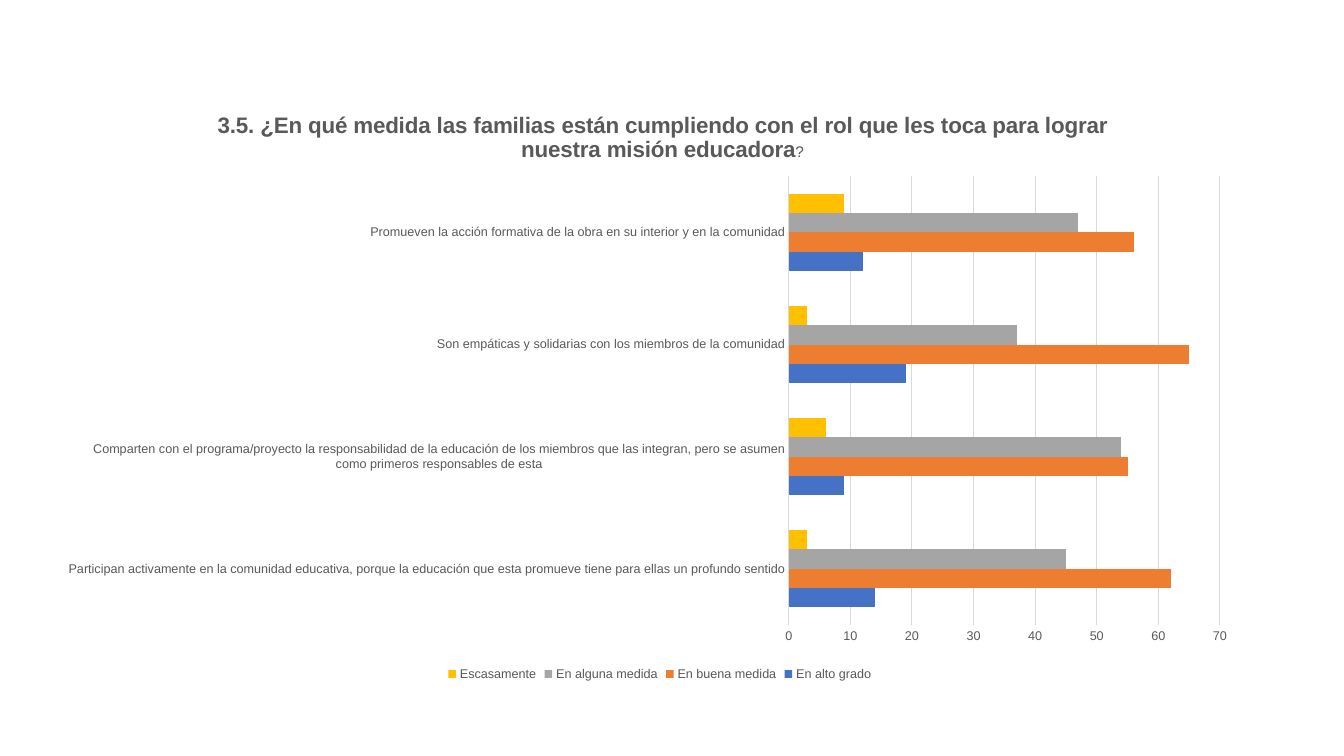
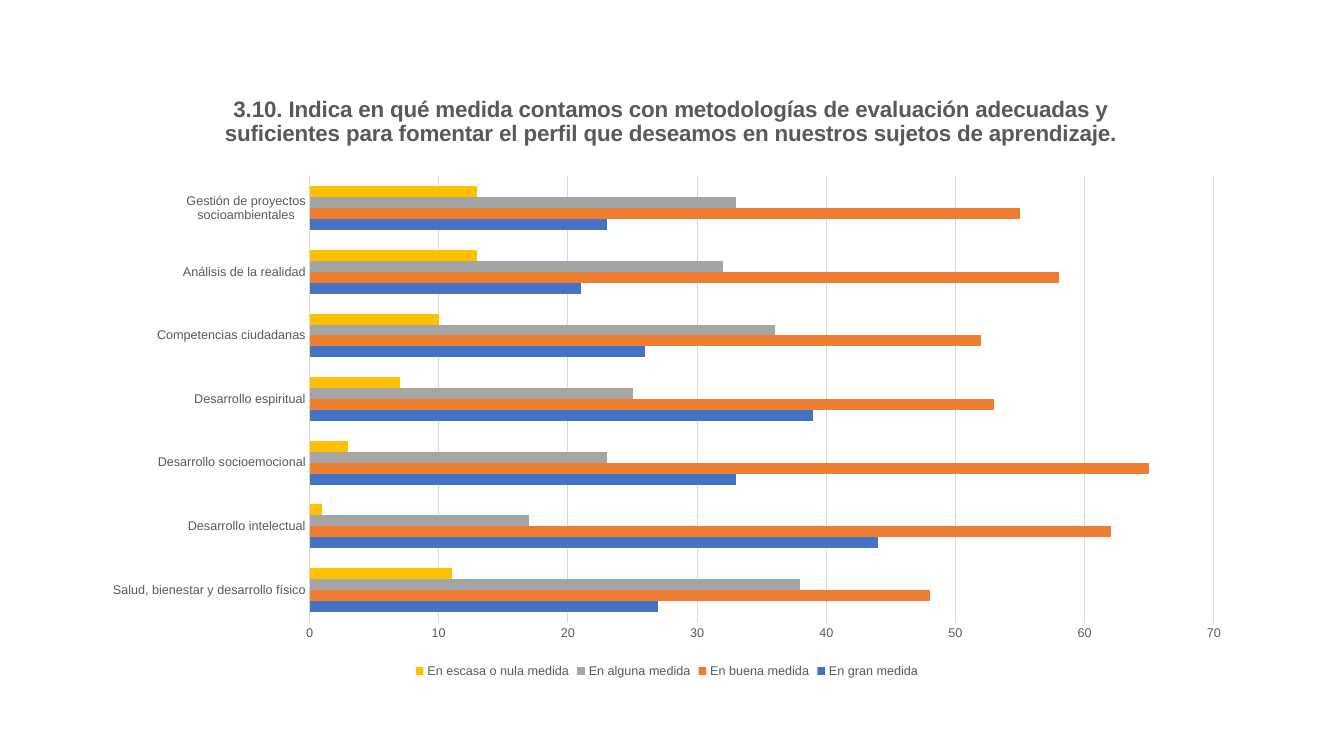
from dataclasses import dataclass

from lxml.etree import SubElement
from pptx import Presentation
from pptx.chart.axis import CategoryAxis, ValueAxis
from pptx.chart.chart import Chart
from pptx.chart.data import CategoryChartData
from pptx.dml.color import RGBColor
from pptx.dml.line import LineFormat
from pptx.enum.chart import XL_CHART_TYPE, XL_LEGEND_POSITION, XL_TICK_MARK
from pptx.oxml.ns import qn
from pptx.oxml.xmlchemy import BaseOxmlElement
from pptx.slide import Slide
from pptx.text.text import Font
from pptx.util import Emu, Pt

SCALE = 9144
FACE = "Arial"
GRAY = "595959"
RULE = "D9D9D9"
HUES = ("4472C4", "ED7D31", "A5A5A5", "FFC000")


@dataclass(frozen=True)
class Box:
    left: int
    top: int
    width: int = 0
    height: int = 0


@dataclass(frozen=True)
class Survey:
    title: str
    tail: str
    frame: Box
    head: Box
    plot: Box
    topics: tuple[str, ...]
    series: dict[str, tuple[int, ...]]


SURVEYS = (
    Survey(
        "3.5. ¿En qué medida las familias están cumpliendo con el rol "
        "que les toca para lograr nuestra misión educadora",
        "?",
        Box(68, 88, 1172, 592),
        Box(212, 108),
        Box(782, 175, 428, 445),
        (
            "Participan activamente en la comunidad educativa, porque la "
            "educación que esta promueve tiene para ellas un profundo sentido",
            "Comparten con el programa/proyecto la responsabilidad de la "
            "educación de los miembros que las integran, pero se asumen "
            "como primeros responsables de esta",
            "Son empáticas y solidarias con los miembros de la comunidad",
            "Promueven la acción formativa de la obra en su interior y en la comunidad",
        ),
        {
            "En alto grado": (14, 9, 19, 12),
            "En buena medida": (62, 55, 65, 56),
            "En alguna medida": (45, 54, 37, 47),
            "Escasamente": (3, 6, 3, 9),
        },
    ),
    Survey(
        "3.10. Indica en qué medida contamos con metodologías de evaluación "
        "adecuadas y suficientes para fomentar el perfil que deseamos "
        "en nuestros sujetos de aprendizaje.",
        "",
        Box(89, 85, 1145, 592),
        Box(219, 90),
        Box(307, 175, 897, 442),
        (
            "Salud, bienestar y desarrollo físico",
            "Desarrollo intelectual",
            "Desarrollo socioemocional",
            "Desarrollo espiritual",
            "Competencias ciudadanas",
            "Análisis de la realidad",
            "Gestión de proyectos socioambientales",
        ),
        {
            "En gran medida": (27, 44, 33, 39, 26, 21, 23),
            "En buena medida": (62, 62, 65, 53, 52, 58, 55)[:0]
            + (48, 62, 65, 53, 52, 58, 55),
            "En alguna medida": (38, 17, 23, 25, 36, 32, 33),
            "En escasa o nula medida": (11, 1, 3, 7, 10, 13, 13),
        },
    ),
)


def px(count: int) -> Emu:
    return Emu(count * SCALE)


def color(code: str) -> RGBColor:
    return RGBColor.from_string(code)


def style(font: Font, size: int = 9, bold: bool = False) -> None:
    font.name = FACE
    font.size = Pt(size)
    font.bold = bold
    font.color.rgb = color(GRAY)


def rule(line: LineFormat) -> None:
    line.color.rgb = color(RULE)
    line.width = Pt(0.75)


def place(part: BaseOxmlElement, box: Box, frame: Box, index: int) -> None:
    for old in part.findall(qn("c:layout")):
        part.remove(old)
    layout = SubElement(part, qn("c:layout"))
    part.insert(index, layout)
    manual = SubElement(layout, qn("c:manualLayout"))
    rows: list[tuple[str, str | float]] = [("xMode", "edge"), ("yMode", "edge")]
    if box.width:
        rows.insert(0, ("layoutTarget", "inner"))
    rows += [
        ("x", (box.left - frame.left) / frame.width),
        ("y", (box.top - frame.top) / frame.height),
    ]
    if box.width:
        rows += [("w", box.width / frame.width), ("h", box.height / frame.height)]
    for name, value in rows:
        SubElement(manual, qn(f"c:{name}")).set("val", str(value))


def add_title(chart: Chart, survey: Survey) -> None:
    chart.has_title = True
    title = chart.chart_title
    para = title.text_frame.paragraphs[0]
    style(para.font, 16, True)
    para.add_run().text = survey.title
    if survey.tail:
        run = para.add_run()
        run.text = survey.tail
        style(run.font, 11)
    title.include_in_layout = False
    place(title._element, survey.head, survey.frame, 1)


def set_axis(axis: CategoryAxis | ValueAxis) -> None:
    axis.major_tick_mark = XL_TICK_MARK.NONE
    axis.minor_tick_mark = XL_TICK_MARK.NONE
    style(axis.tick_labels.font)


def add_survey(slide: Slide, survey: Survey) -> None:
    data = CategoryChartData()
    data.categories = survey.topics
    for name, values in survey.series.items():
        data.add_series(name, values)
    frame = survey.frame
    chart = slide.shapes.add_chart(
        XL_CHART_TYPE.BAR_CLUSTERED,
        px(frame.left), px(frame.top), px(frame.width), px(frame.height),
        data,
    ).chart
    style(chart.font, 10)
    add_title(chart, survey)

    bars = chart.plots[0]
    bars.gap_width = 182
    bars.vary_by_categories = False
    for series, hue in zip(bars.series, HUES):
        series.format.fill.solid()
        series.format.fill.fore_color.rgb = color(hue)

    topics, scale = chart.category_axis, chart.value_axis
    set_axis(topics)
    set_axis(scale)
    rule(topics.format.line)
    scale.format.line.fill.background()
    scale.has_major_gridlines = True
    rule(scale.major_gridlines.format.line)
    scale.minimum_scale = 0
    scale.maximum_scale = 70
    scale.major_unit = 10

    chart.has_legend = True
    chart.legend.position = XL_LEGEND_POSITION.BOTTOM
    chart.legend.include_in_layout = False
    style(chart.legend.font)
    area = chart._chartSpace.xpath("c:chart/c:plotArea")[0]
    place(area, survey.plot, frame, 0)


def main() -> None:
    deck = Presentation()
    deck.slide_width, deck.slide_height = px(1333), px(750)
    for survey in SURVEYS:
        add_survey(deck.slides.add_slide(deck.slide_layouts[6]), survey)
    deck.save("out.pptx")


if __name__ == "__main__":
    main()
